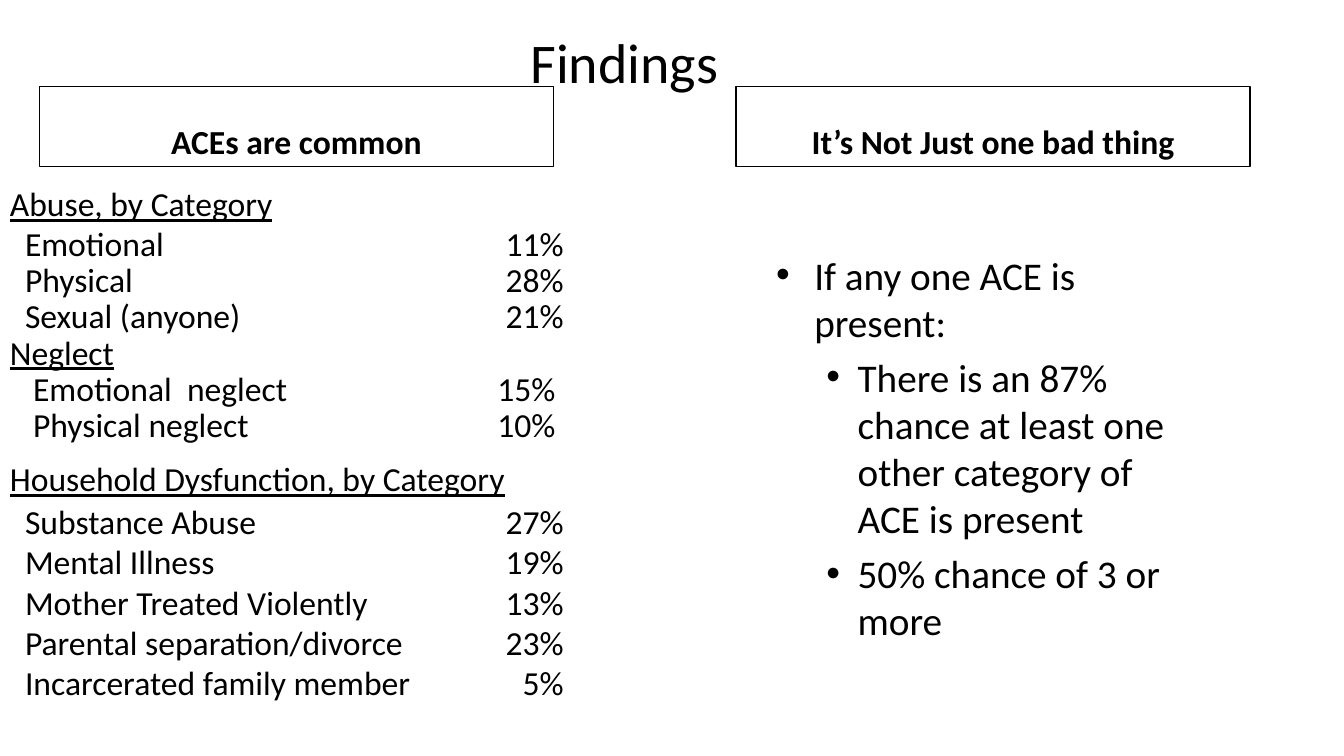
from pptx import Presentation
from pptx.dml.color import RGBColor
from pptx.enum.text import MSO_ANCHOR as Anchor, PP_ALIGN as Align
from pptx.util import Inches, Pt
from lxml.etree import SubElement
from pptx.oxml.ns import qn

FONT, INK = "Calibri", "000000"

deck = Presentation()
deck.slide_width, deck.slide_height = Inches(13.33), Inches(7.5)
slide = deck.slides.add_slide(deck.slide_layouts[6])


def add_box(left, top, width, height, anchor):
    """Text box placed in percent of the slide's width and height."""
    across, down = deck.slide_width / 100, deck.slide_height / 100
    box = slide.shapes.add_textbox(int(left * across), int(top * down),
                                   int(width * across), int(height * down))
    box.text_frame.word_wrap = True
    box.text_frame.vertical_anchor = anchor
    return box


def write(box, text, size, align=Align.LEFT, bold=False, before=0):
    """Fill the box's first paragraph, or append one after it."""
    frame = box.text_frame
    line = frame.add_paragraph() if frame.text else frame.paragraphs[0]
    line.text, line.alignment, line.space_before = text, align, Pt(before)
    line.font.name, line.font.size, line.font.bold = FONT, Pt(size), bold
    line.font.color.rgb = RGBColor.from_string(INK)
    return line


# Title
title = add_box(2.25, 1.73, 88.4, 12.7, Anchor.MIDDLE)
write(title, "Findings", 40, Align.CENTER)

# Framed column headings
for left, heading in ((2.93, "ACEs are common"),
                      (54.76, "It’s Not Just one bad thing")):
    frame = add_box(left, 11.47, 38.26, 10.53, Anchor.BOTTOM)
    frame.line.color.rgb = RGBColor.from_string(INK)
    frame.line.width = Pt(1)
    write(frame, heading, 24, Align.CENTER, bold=True)

# Prevalence list: group, indent, line spacing, rows
groups = [
    ("Abuse, by Category", 1, 0.15, 0.5,
     [("Emotional", "11%"), ("Physical", "28%"), ("Sexual (anyone)", "21%")]),
    ("Neglect", 0.5, 0.23, 0.5,
     [("Emotional  neglect", "15%"), ("Physical neglect", "10%")]),
    ("Household Dysfunction, by Category", 1, 0.15, 0.6,
     [("Substance Abuse", "27%"), ("Mental Illness", "19%"),
      ("Mother Treated Violently", "13%"),
      ("Parental separation/divorce", "23%"),
      ("Incarcerated family member", "5%")]),
]
prevalence = add_box(0, 23.6, 43.8, 76.4, Anchor.TOP)
for group, group_spacing, indent, row_spacing, rows in groups:
    heading = write(prevalence, group, 24, before=11.6)
    heading.font.underline = True
    heading.line_spacing = group_spacing
    for category, share in rows:
        row = write(prevalence, f"{category}\t{share}", 24, before=11.6)
        row.line_spacing = row_spacing
        props = row._p.get_or_add_pPr()
        props.set("marL", str(Inches(indent)))
        # Right-aligned tab stop for the percentages
        stops = SubElement(props, qn("a:tabLst"))
        SubElement(stops, qn("a:tab"), pos=str(Inches(5.57)), algn="r")
        props.insert_element_before(stops, "a:defRPr", "a:extLst")

# Bulleted points: level, text indent, bullet hang
points = [
    (0, 0.38, 0.38, "If any one ACE is present:"),
    (1, 0.81, 0.31, "There is an 87% chance at least one other category of "
                    "ACE is present"),
    (1, 0.81, 0.31, "50% chance of 3 or more"),
]
cooccurrence = add_box(57, 32.53, 30.53, 54.27, Anchor.TOP)
for level, indent, hang, text in points:
    point = write(cooccurrence, text, 28, before=5.6)
    point.level = level
    props = point._p.get_or_add_pPr()
    props.set("marL", str(Inches(indent)))
    props.set("indent", str(-Inches(hang)))
    typeface = SubElement(props, qn("a:buFont"), typeface="Arial")
    bullet = SubElement(props, qn("a:buChar"), char="•")
    for mark in (typeface, bullet):
        props.insert_element_before(mark, "a:defRPr", "a:extLst")

deck.save("out.pptx")
